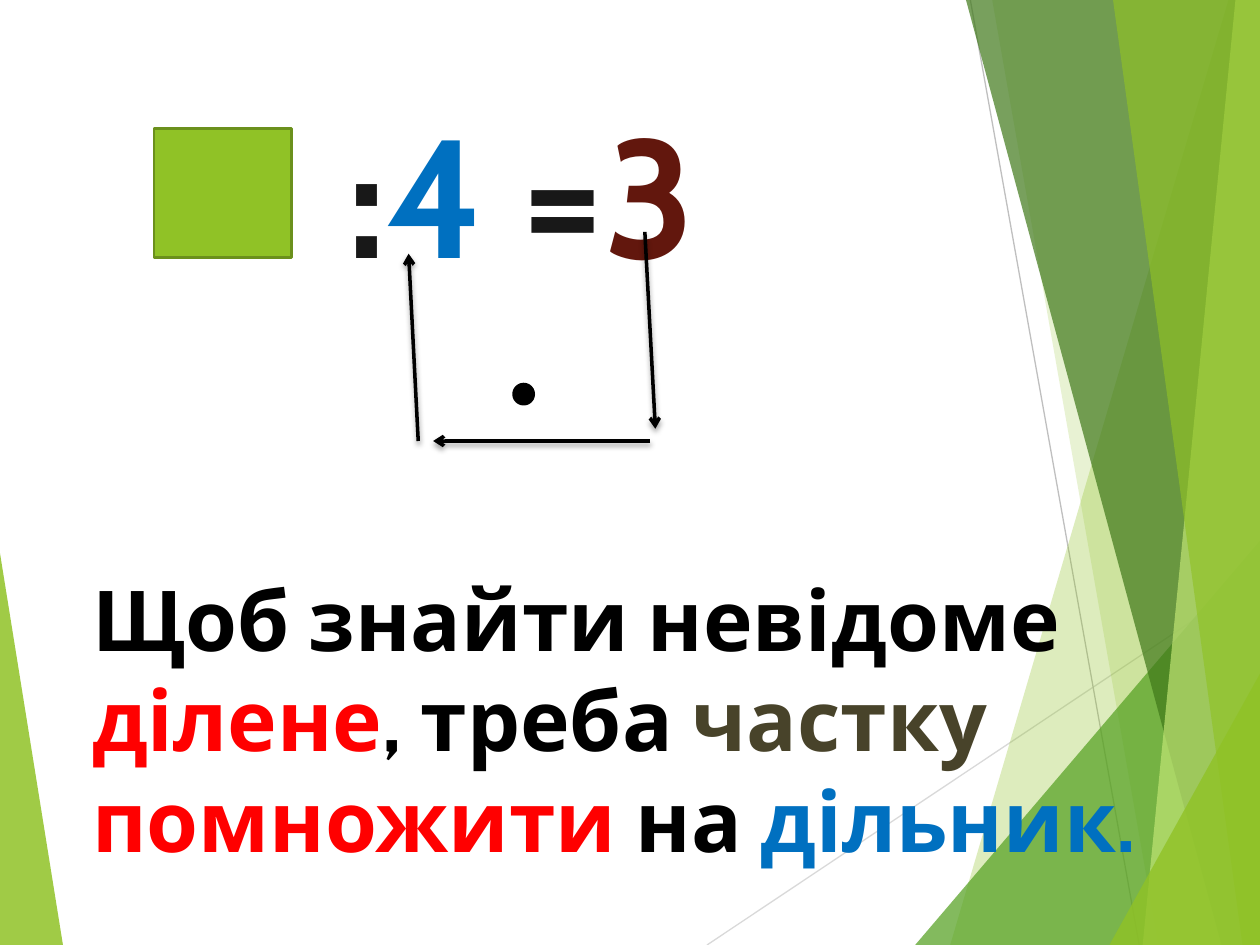
from dataclasses import dataclass

from lxml import etree
from pptx import Presentation
from pptx.dml.color import RGBColor
from pptx.enum.shapes import MSO_CONNECTOR, MSO_SHAPE
from pptx.enum.text import MSO_ANCHOR, MSO_AUTO_SIZE, PP_ALIGN
from pptx.oxml.ns import qn
from pptx.util import Pt

STRAIGHT = MSO_CONNECTOR.STRAIGHT
RECTANGLE, OVAL = MSO_SHAPE.RECTANGLE, MSO_SHAPE.OVAL
TOP = MSO_ANCHOR.TOP
NO_AUTOFIT, GROW = MSO_AUTO_SIZE.NONE, MSO_AUTO_SIZE.SHAPE_TO_FIT_TEXT
LEFT, CENTER = PP_ALIGN.LEFT, PP_ALIGN.CENTER
TITLE_ONLY = 5
WIDTH, HEIGHT = 720, 540


@dataclass(frozen=True)
class Theme:
    font: str = "Cabin"
    equation: int = 96
    rule: int = 48
    black: str = "000000"
    ink: str = "181818"
    blue: str = "0070C0"
    maroon: str = "62170D"
    red: str = "FF0000"
    olive: str = "48432A"
    lime: str = "90C226"
    lime_edge: str = "6B901C"
    pale: str = "C0E474"
    green: str = "54A021"
    forest: str = "3F7819"
    gray: str = "BFBFBF"
    light_gray: str = "D9D9D9"


THEME = Theme()

# colour, opacity in percent, upper and lower end of the slanted edge
RIGHT_PANELS = [
    (THEME.lime, 30, (702, 0), (543, HEIGHT)),
    (THEME.lime, 20, (567, 0), (662, HEIGHT)),
    (THEME.green, 72, (WIDTH, 309), (523, HEIGHT)),
    (THEME.forest, 70, (552, 0), (698, HEIGHT)),
    (THEME.pale, 70, (706, 0), (653, HEIGHT)),
    (THEME.lime, 65, (636, 0), (710, HEIGHT)),
    (THEME.lime, 80, (WIDTH, 385), (634, HEIGHT)),
]
ARROWS = [
    ((368.5, 132.5), (374.5, 245)),
    ((371.5, 252), (247.5, 252)),
    ((239, 252), (233.5, 145)),
]
EQUATION = [(":", THEME.ink), ("4", THEME.blue), (" =", THEME.ink),
            ("3", THEME.maroon)]
RULE = [("Щоб знайти невідоме ", THEME.black), ("ділене", THEME.red),
        (", треба ", THEME.black), ("частку ", THEME.olive),
        ("помножити", THEME.red), (" на ", THEME.black),
        ("дільник.", THEME.blue)]


def rgb(color):
    return RGBColor.from_string(color)


def add_panel(slide, side, color, opacity, upper, lower):
    """Fill the area between a slanted edge and the slide border at x = side."""
    builder = slide.shapes.build_freeform(*upper, scale=Pt(1))
    builder.add_line_segments([lower, (side, HEIGHT), (side, upper[1])])
    sp = builder.convert_to_shape()
    sp.shadow.inherit = False
    sp.line.fill.background()
    sp.fill.solid()
    sp.fill.fore_color.rgb = rgb(color)
    clr = sp.fill._xPr.find(".//" + qn("a:srgbClr"))
    etree.SubElement(clr, qn("a:alpha"), val=str(opacity * 1000))


def add_line(slide, start, end, color, width):
    """Draw a plain line and return it with its empty effect list."""
    ends = [Pt(v) for v in (*start, *end)]
    line = slide.shapes.add_connector(STRAIGHT, *ends)
    line.line.color.rgb = rgb(color)
    line.line.width = Pt(width)
    effects = etree.SubElement(line._element.spPr, qn("a:effectLst"))
    return line, effects


def add_arrow(slide, start, end):
    line, effects = add_line(slide, start, end, THEME.black, 2)
    etree.SubElement(line.line._get_or_add_ln(), qn("a:tailEnd"), type="arrow")
    shadow = etree.SubElement(
        effects, qn("a:outerShdw"), blurRad=str(Pt(3)), dist=str(Pt(2)),
        dir="5400000", rotWithShape="0")
    clr = etree.SubElement(shadow, qn("a:srgbClr"), val=THEME.black)
    etree.SubElement(clr, qn("a:alpha"), val="35000")


def add_figure(slide, kind, box, fill, edge):
    sp = slide.shapes.add_shape(kind, *map(Pt, box))
    sp.shadow.inherit = False
    sp.fill.solid()
    sp.fill.fore_color.rgb = rgb(fill)
    sp.line.color.rgb = rgb(edge)
    sp.line.width = Pt(1.5)


def write_runs(sp, box, runs, size, align, auto_size):
    """Place a text shape and fill it with one paragraph of coloured runs."""
    for name, value in zip(("left", "top", "width", "height"), box):
        setattr(sp, name, Pt(value))
    tf = sp.text_frame
    frame_format = {"word_wrap": True, "auto_size": auto_size,
                    "vertical_anchor": TOP}
    for name, value in frame_format.items():
        setattr(tf, name, value)
    p = tf.paragraphs[0]
    p.alignment = align
    run_format = {"name": THEME.font, "size": Pt(size), "bold": True}
    for text, color in runs:
        r = p.add_run()
        r.text = text
        for name, value in run_format.items():
            setattr(r.font, name, value)
        r.font.color.rgb = rgb(color)


def add_backdrop(slide):
    add_panel(slide, 0, THEME.lime, 85, (0, 316), (35.5, HEIGHT))
    add_line(slide, (404, HEIGHT), (WIDTH, 329), THEME.light_gray, 0.75)
    add_line(slide, (554.5, 0), (651, HEIGHT), THEME.gray, 0.75)
    for panel in RIGHT_PANELS:
        add_panel(slide, WIDTH, *panel)


def main():
    prs = Presentation()
    prs.slide_width, prs.slide_height = Pt(WIDTH), Pt(HEIGHT)
    slide = prs.slides.add_slide(prs.slide_layouts[TITLE_ONLY])
    add_backdrop(slide)
    write_runs(slide.shapes.title, (48, 48, 500, 104), EQUATION,
               THEME.equation, CENTER, NO_AUTOFIT)
    add_figure(slide, RECTANGLE, (88, 73.5, 78.5, 73.5), THEME.lime,
               THEME.lime_edge)
    for start, end in ARROWS:
        add_arrow(slide, start, end)
    add_figure(slide, OVAL, (293.5, 219.5, 11.5, 11.5), THEME.black,
               THEME.black)
    box = (45.5, 320.5, 641.5, 181.5)
    write_runs(slide.shapes.add_textbox(*map(Pt, box)), box, RULE,
               THEME.rule, LEFT, GROW)
    prs.save("out.pptx")


if __name__ == "__main__":
    main()
